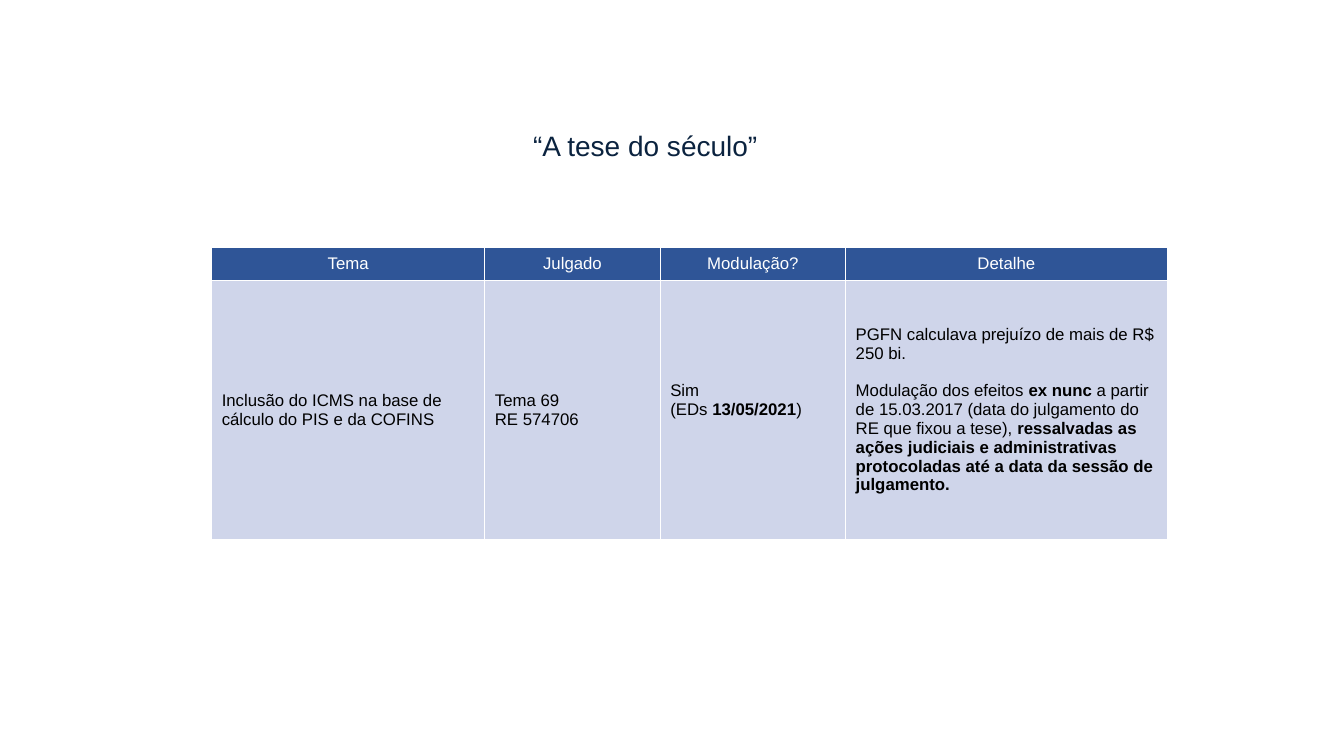
"""Build a slide with a title and a table on a court ruling."""
from lxml import etree
from pptx import Presentation
from pptx import util as u
from pptx.dml.color import RGBColor
from pptx.enum import text
from pptx.oxml.ns import qn

FONT = "Arial"
NAVY, BLUE, PALE, WHITE, BLACK = "0B233F", "2F5597", "CFD5EA", "FFFFFF", "000000"
TEXT_SIZE = 12
BLANK_LINE = 13.6
COLUMN_WIDTHS = [195.12, 125.28, 132.48, 229.68]
ROW_HEIGHTS = [23.76, 185.04]
HEADINGS = ["Tema", "Julgado", "Modulação?", "Detalhe"]
RULING = [
    [["Inclusão do ICMS na base de cálculo do PIS e da COFINS"]],
    [["Tema 69"], ["RE 574706"]],
    [["Sim"], ["(EDs ", "13/05/2021", ")"]],
    [
        ["PGFN calculava prejuízo de mais de R$ 250 bi."],
        [
            "Modulação dos efeitos ",
            "ex nunc",
            " a partir de 15.03.2017 (data do julgamento do RE que fixou a tese), ",
            "ressalvadas as ações judiciais e administrativas protocoladas até a data da sessão de julgamento.",
        ],
    ],
]


def color(value):
    """Turn a hex string into a colour."""
    return RGBColor.from_string(value)


def apply_format(target, values):
    """Set each attribute in a dict of format values."""
    for name, value in values.items():
        setattr(target, name, value)


def add_run(paragraph, content, size, hex_color, bold=False):
    """Add a formatted run to a paragraph."""
    run = paragraph.add_run()
    run.text = content
    apply_format(run.font, {"name": FONT, "size": u.Pt(size), "bold": bold})
    run.font.color.rgb = color(hex_color)


def add_borders(cell, hex_color, width):
    """Draw a line on all four sides of a cell."""
    properties = cell._tc.get_or_add_tcPr()
    for side in ("lnL", "lnR", "lnT", "lnB"):
        line = etree.SubElement(properties, qn(f"a:{side}"), w=str(u.Pt(width)))
        fill = etree.SubElement(line, qn("a:solidFill"))
        etree.SubElement(fill, qn("a:srgbClr"), val=hex_color)


def fill_cell(cell, paragraphs, fill, hex_color, alignment):
    """Style a cell and write its paragraphs, with every second run bold."""
    add_borders(cell, WHITE, 1)
    cell.fill.solid()
    cell.fill.fore_color.rgb = color(fill)
    cell.vertical_anchor = text.MSO_ANCHOR.MIDDLE
    frame = cell.text_frame
    for index, runs in enumerate(paragraphs):
        paragraph = frame.add_paragraph() if index else frame.paragraphs[0]
        paragraph.alignment = alignment
        for position, content in enumerate(runs):
            add_run(paragraph, content, TEXT_SIZE, hex_color, position % 2 == 1)


def add_title(slide, left, top, width, height):
    """Place the title in its box."""
    frame = slide.shapes.add_textbox(u.Pt(left), u.Pt(top), u.Pt(width), u.Pt(height)).text_frame
    apply_format(frame, {
        "word_wrap": True,
        "vertical_anchor": text.MSO_ANCHOR.TOP,
        "margin_top": u.Pt(17),
    })
    paragraph = frame.paragraphs[0]
    paragraph.line_spacing = 0.9
    add_run(paragraph, "“A tese do século”", 20, NAVY)


def add_ruling_table(slide, left, top):
    """Place the table with its headings and its ruling."""
    table = slide.shapes.add_table(
        len(ROW_HEIGHTS), len(COLUMN_WIDTHS), u.Pt(left), u.Pt(top),
        u.Pt(sum(COLUMN_WIDTHS)), u.Pt(sum(ROW_HEIGHTS)),
    ).table
    table.horz_banding = False
    for row, height in zip(table.rows, ROW_HEIGHTS):
        row.height = u.Pt(height)
    for index, width in enumerate(COLUMN_WIDTHS):
        table.columns[index].width = u.Pt(width)
        fill_cell(table.cell(0, index), [[HEADINGS[index]]], BLUE, WHITE, text.PP_ALIGN.CENTER)
        fill_cell(table.cell(1, index), RULING[index], PALE, BLACK, text.PP_ALIGN.LEFT)
    table.cell(1, 2).margin_bottom = u.Pt(3.6 + BLANK_LINE)
    table.cell(1, 3).text_frame.paragraphs[1].space_before = u.Pt(BLANK_LINE)


def main():
    """Build and save the presentation."""
    presentation = Presentation()
    apply_format(presentation, {"slide_width": u.Pt(960), "slide_height": u.Pt(540)})
    slide = presentation.slides.add_slide(presentation.slide_layouts[6])
    add_title(slide, 373.68, 77.76, 343.44, 104.4)
    add_ruling_table(slide, 151.2, 176.4)
    presentation.save("out.pptx")


if __name__ == "__main__":
    main()
